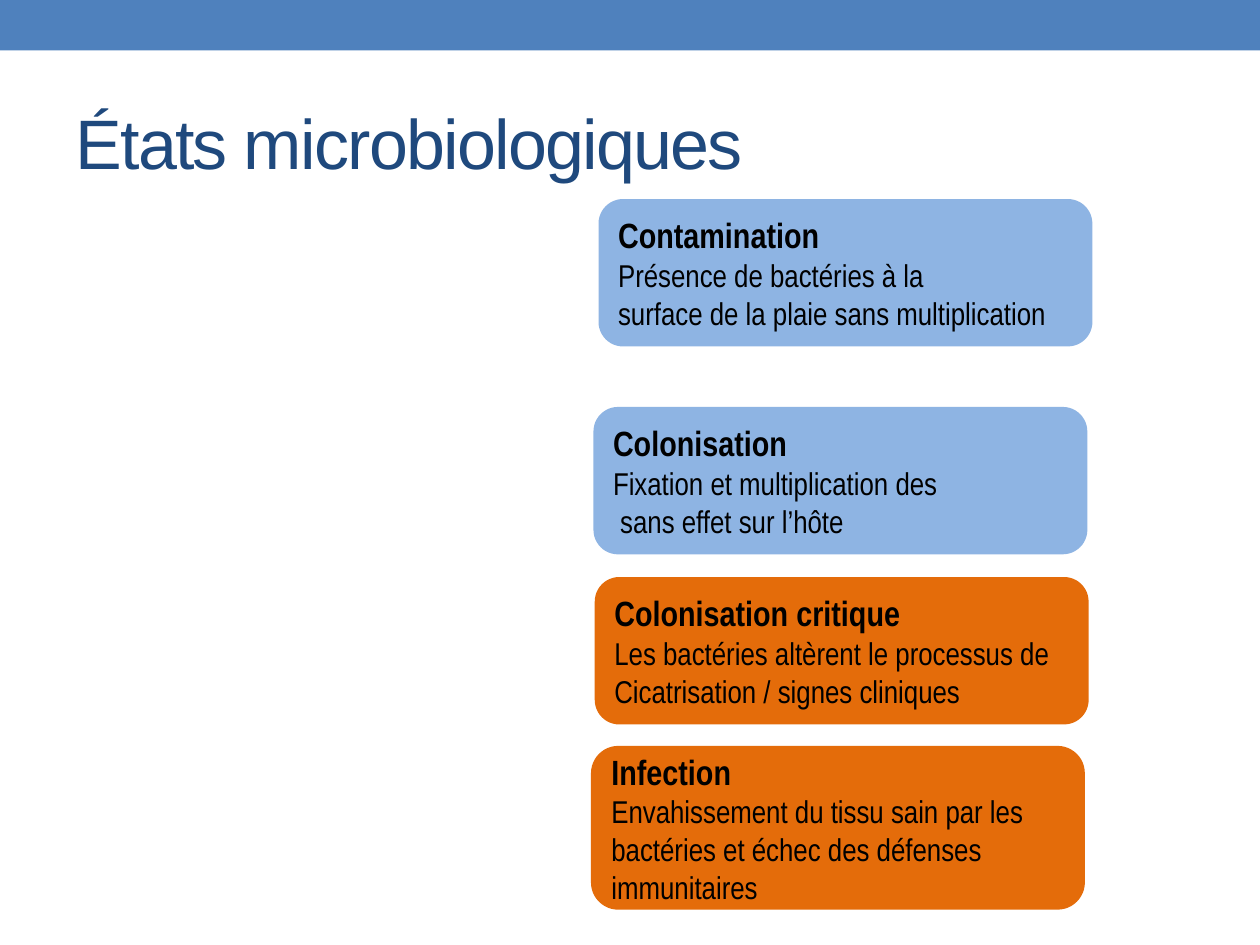
import pptx
import pptx.util
import pptx.dml.color
import pptx.enum.shapes
import pptx.enum.text

Inches = pptx.util.Inches
Pt = pptx.util.Pt
SHAPES = pptx.enum.shapes.MSO_SHAPE
MIDDLE = pptx.enum.text.MSO_ANCHOR.MIDDLE
LEFT = pptx.enum.text.PP_ALIGN.LEFT

CARD_WIDTH = 3.92
BLUE = "8EB4E3"
ORANGE = "E46C0A"

STATES = [
    (4.75, 1.58, 1.17, BLUE, "Contamination",
     ["Présence de bactéries à la",
      "surface de la plaie sans multiplication"]),
    (4.71, 3.23, 1.17, BLUE, "Colonisation",
     ["Fixation et multiplication des",
      " sans effet sur l’hôte"]),
    (4.72, 4.58, 1.17, ORANGE, "Colonisation critique",
     ["Les bactéries altèrent le processus de",
      "Cicatrisation / signes cliniques"]),
    (4.69, 5.92, 1.3, ORANGE, "Infection",
     ["Envahissement du tissu sain par les",
      "bactéries et échec des défenses",
      "immunitaires"]),
]


def color(value):
    return pptx.dml.color.RGBColor.from_string(value)


def set_font(font, name, size, value, bold=False):
    font.name = name
    font.size = Pt(size)
    font.bold = bold
    font.color.rgb = color(value)


def add_filled_shape(page, kind, left, top, width, height, fill):
    box = page.shapes.add_shape(
        kind, Inches(left), Inches(top), Inches(width), Inches(height))
    box.shadow.inherit = False
    box.fill.solid()
    box.fill.fore_color.rgb = color(fill)
    box.line.fill.background()
    return box


def set_title(page, text):
    title = page.shapes.title
    title.left, title.top = Inches(0.5), Inches(0.58)
    title.width, title.height = Inches(9), Inches(1.08)
    frame = title.text_frame
    frame.text = text
    frame.vertical_anchor = MIDDLE
    para = frame.paragraphs[0]
    para.alignment = LEFT
    set_font(para.font, "Arial", 40, "1F497D")
    span = para.runs[0]
    span.font.size = Pt(40)
    span.font._element.set("spc", "-100")


def add_state(page, left, top, height, fill, heading, lines):
    box = add_filled_shape(page, SHAPES.FLOWCHART_ALTERNATE_PROCESS,
                           left, top, CARD_WIDTH, height, fill)
    frame = box.text_frame
    frame.word_wrap = False
    frame.vertical_anchor = MIDDLE
    frame.text = "\n".join([heading] + lines)
    for index, para in enumerate(frame.paragraphs):
        is_heading = index == 0
        para.alignment = LEFT
        set_font(para.font, "Arial Narrow", 20 if is_heading else 18,
                 "000000", is_heading)


def main():
    deck = pptx.Presentation()
    deck.slide_width, deck.slide_height = Inches(10), Inches(7.5)
    page = deck.slides.add_slide(deck.slide_layouts.get_by_name("Title Only"))
    add_filled_shape(page, SHAPES.RECTANGLE, 0, 0, 10, 0.4, "4F81BD")
    for state in STATES:
        add_state(page, *state)
    set_title(page, "États microbiologiques")
    deck.save("out.pptx")


if __name__ == "__main__":
    main()
